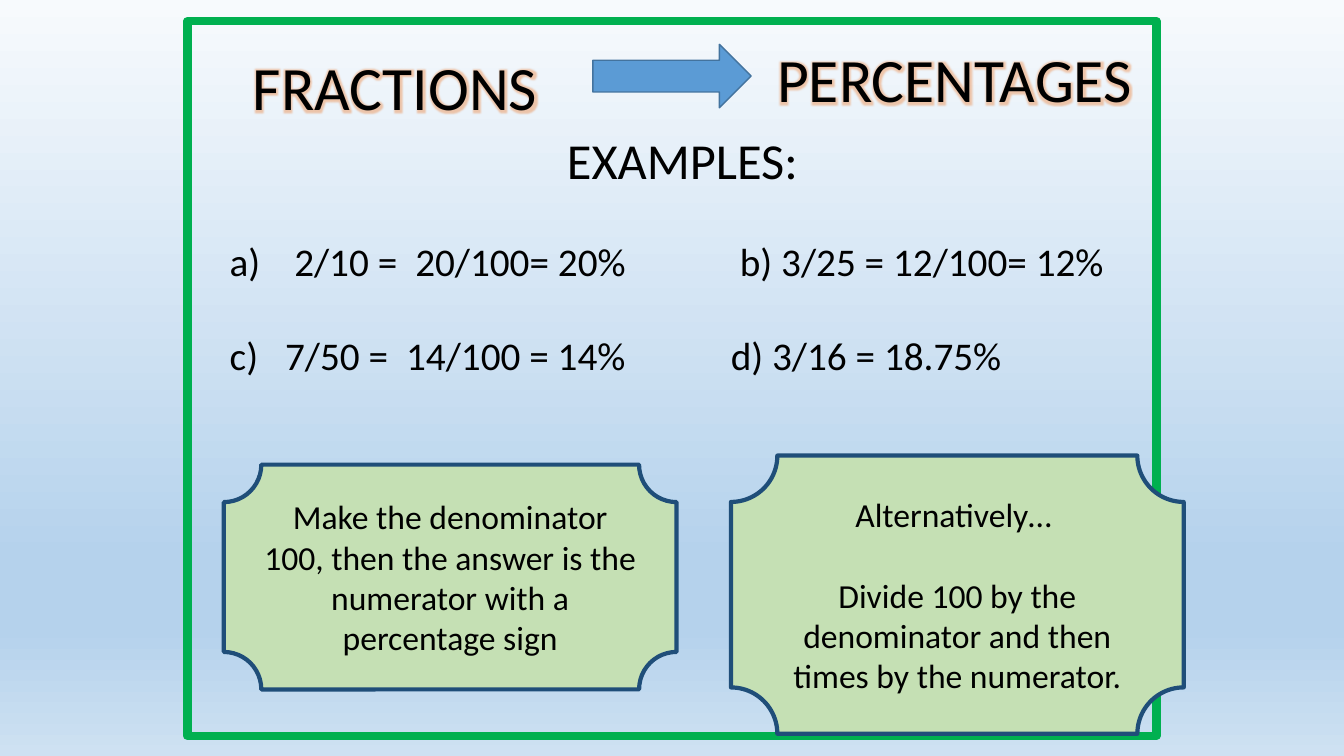
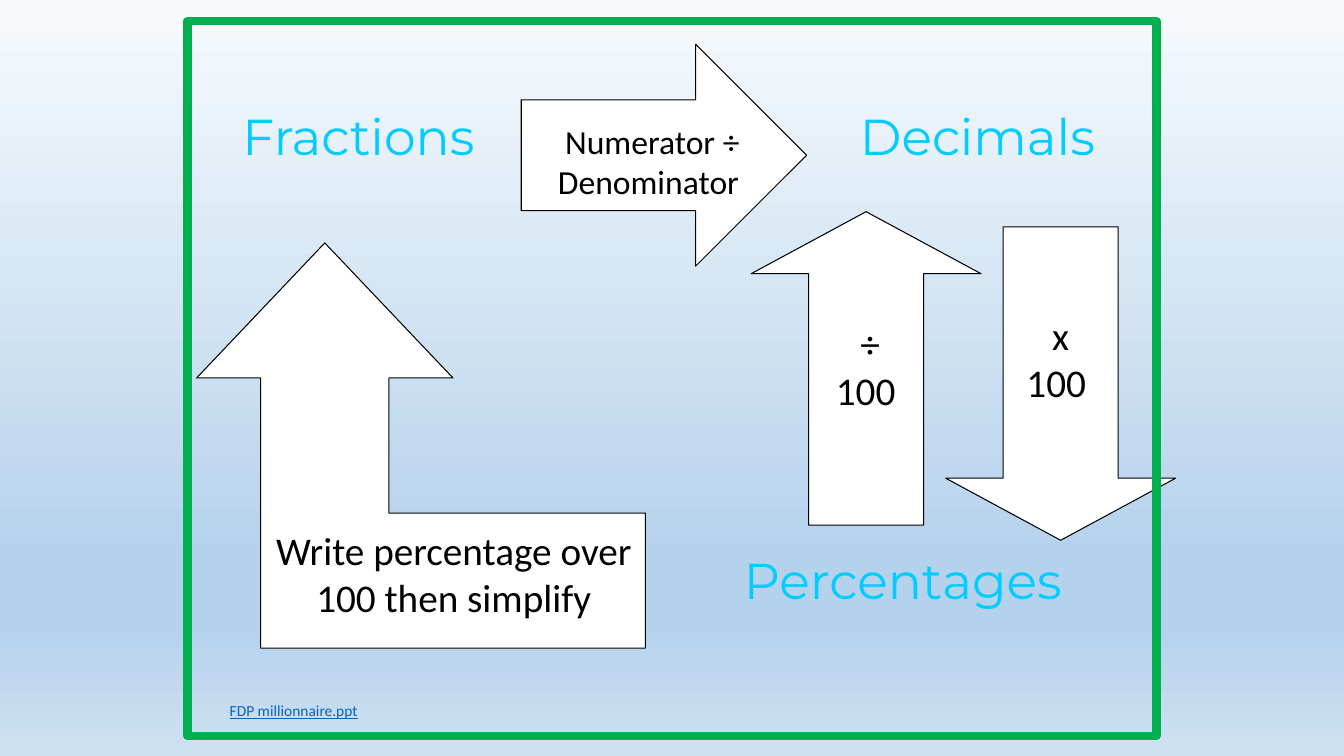
from dataclasses import dataclass

from lxml import etree
from pptx import Presentation
from pptx.dml import color
from pptx.enum import shapes, text
from pptx.oxml import ns
from pptx.util import Inches, Pt


@dataclass(frozen=True)
class Theme:
    sky: tuple = ((0, "F7FAFD"), (74, "B5D2EC"), (83, "B5D2EC"), (100, "CEE1F2"))
    ink: str = "000000"
    white: str = "FFFFFF"
    green: str = "00B050"
    mint: str = "C5E0B4"
    navy: str = "1F4E79"
    blue: str = "5B9BD5"
    edge: str = "43739E"
    cyan: str = "00CCFF"
    link: str = "0563C1"
    glow: str = "ED7D31"
    body: str = "Calibri"
    head: str = "Montserrat"
    title: int = 44
    lead: int = 36
    big: int = 28
    note: int = 24
    small: int = 11


T = Theme()
KIND = shapes.MSO_SHAPE
LEFT, MID = text.PP_ALIGN.LEFT, text.PP_ALIGN.CENTER
FRAME = (1.86, 0.21, 9.61, 7.09)


def rgb(code):
    return color.RGBColor.from_string(code)


def node(parent, tag, **attrs):
    return etree.SubElement(parent, ns.qn(tag), {k: str(v) for k, v in attrs.items()})


def paint(shape, fill, line, width):
    shape.shadow.inherit = False
    if fill:
        shape.fill.solid()
        shape.fill.fore_color.rgb = rgb(fill)
    else:
        shape.fill.background()
    shape.line.color.rgb = rgb(line)
    shape.line.width = Pt(width)
    return shape


def block(slide, kind, box, fill, line, width, adjust=()):
    shape = slide.shapes.add_shape(kind, *map(Inches, box))
    for i, value in enumerate(adjust):
        shape.adjustments[i] = value
    return paint(shape, fill, line, width)


def style(para, size, ink=T.ink, font=T.body, align=MID, gap=0):
    para.alignment = align
    para.space_before = Pt(gap)
    for run in para.runs:
        run.font.size = Pt(size)
        run.font.name = font
        run.font.color.rgb = rgb(ink)


def write(frame, words, size, gap=0, **look):
    frame.word_wrap = True
    frame.text = words
    for i, para in enumerate(frame.paragraphs):
        style(para, size, gap=gap if i else 0, **look)


def label(slide, box, words, size, **look):
    frame = slide.shapes.add_textbox(*map(Inches, box)).text_frame
    write(frame, words, size, **look)
    return frame


def halo(run):
    props = run.font.fill._xPr
    effect = etree.Element(ns.qn("a:effectLst"))
    glow = node(effect, "a:glow", rad=63500)
    tint = node(glow, "a:srgbClr", val=T.glow)
    node(tint, "a:alpha", val=40000)
    props.find(ns.qn("a:solidFill")).addnext(effect)


def tabs(para, stops):
    props = para._p.get_or_add_pPr()
    row = node(props, "a:tabLst")
    for stop in stops:
        node(row, "a:tab", pos=Inches(stop), algn="l")


def sky(slide):
    fill = slide.background.fill
    fill.gradient()
    fill.gradient_angle = 270
    stops = fill._fill._gradFill.find(ns.qn("a:gsLst"))
    for old in list(stops):
        stops.remove(old)
    for place, code in T.sky:
        stop = node(stops, "a:gs", pos=place * 1000)
        node(stop, "a:srgbClr", val=code)


def border(slide):
    block(slide, KIND.RECTANGLE, FRAME, None, T.green, 6)


def heading(slide, x, y):
    block(slide, KIND.RIGHT_ARROW, (x + 3.47, y + 0.08, 1.57, 0.63), T.blue, T.edge, 1)
    for dx, dy, words in ((0, 0.08, "FRACTIONS"), (5.2, 0, "PERCENTAGES")):
        frame = label(slide, (x + dx, y + dy, 3.9, 0.84), words, T.title, align=LEFT)
        halo(frame.paragraphs[0].runs[0])


def samples(slide, box):
    lines = (
        "EXAMPLES: ",
        "a)\t2/10 =\t20/100= 20%\tb) 3/25 = 12/100= 12%",
        "c)\t7/50 =\t14/100 = 14%\td) 3/16 = 18.75%",
    )
    frame = label(slide, box, "\n".join(lines), T.big, gap=34, align=LEFT)
    style(frame.paragraphs[0], T.lead)
    for para, shift in zip(frame.paragraphs[1:], (0.09, 0)):
        tabs(para, [stop + shift for stop in (0.55, 1.75, 4.97)])


def plaque(slide, box, words):
    shape = block(slide, KIND.PLAQUE, box, T.mint, T.navy, 3)
    shape.text_frame.vertical_anchor = text.MSO_ANCHOR.MIDDLE
    write(shape.text_frame, words, T.note, gap=29)


def bent(slide, x, y, w, h):
    grid = ((2, 0), (4, 1), (3, 1), (3, 2), (7, 2), (7, 3), (1, 3), (1, 1), (0, 1))
    points = [(Inches(x + w * i / 7), Inches(y + h * j / 3)) for i, j in grid]
    path = slide.shapes.build_freeform(*points[0])
    path.add_line_segments(points[1:], close=True)
    paint(path.convert_to_shape(), T.white, T.ink, 0.75)
    label(slide, (x + 0.39, y + 2.76, 4.32, 1.3),
          "Write percentage over\n100 then simplify", T.big)


def arrow(slide, kind, box, head, spot, words, size):
    block(slide, kind, box, T.white, T.ink, 0.75, (0.5, head))
    dx, dy, w, h = spot
    label(slide, (box[0] + dx, box[1] + dy, w, h), words, size)


def examples(slide):
    sky(slide)
    heading(slide, 2.41, 0.36)
    border(slide)
    plaque(slide, (2.22, 4.61, 4.49, 2.23),
           "Make the denominator 100, then the answer is the numerator with a percentage sign")
    samples(slide, (2.18, 1.23, 9.29, 2.59))
    plaque(slide, (7.25, 4.52, 4.49, 2.76),
           "Alternatively… \nDivide 100 by the denominator and then times by the numerator.")


def cycle(slide):
    sky(slide)
    for box, words in (
        ((2.02, 0.99, 3.07, 0.93), "Fractions"),
        ((8.16, 0.99, 3.07, 0.93), "Decimals"),
        ((6.67, 5.4, 4.57, 1.06), "Percentages"),
    ):
        label(slide, box, words, T.lead, ink=T.cyan, font=T.head)
    arrow(slide, KIND.RIGHT_ARROW, (5.17, 0.44, 2.83, 2.2), 0.5,
          (0.16, 0.71, 2.28, 0.91), "Numerator ÷ Denominator ", T.note)
    arrow(slide, KIND.DOWN_ARROW, (9.38, 2.25, 2.28, 3.11), 0.27,
          (0.67, 0.79, 0.94, 1.04), "x 100 ", T.big)
    arrow(slide, KIND.UP_ARROW, (7.45, 2.1, 2.28, 3.11), 0.27,
          (0.71, 1.02, 0.94, 1.04), "÷ 100 ", T.big)
    bent(slide, 1.95, 2.41, 4.45, 4.02)
    border(slide)
    frame = label(slide, (2.18, 6.91, 2.99, 0.29), "FDP millionnaire.ppt",
                  T.small, ink=T.link, align=LEFT)
    frame.paragraphs[0].runs[0].font.underline = True


def main():
    deck = Presentation()
    deck.slide_width, deck.slide_height = Inches(13.33), Inches(7.5)
    for build in (examples, cycle):
        build(deck.slides.add_slide(deck.slide_layouts[6]))
    deck.save("out.pptx")


if __name__ == "__main__":
    main()
